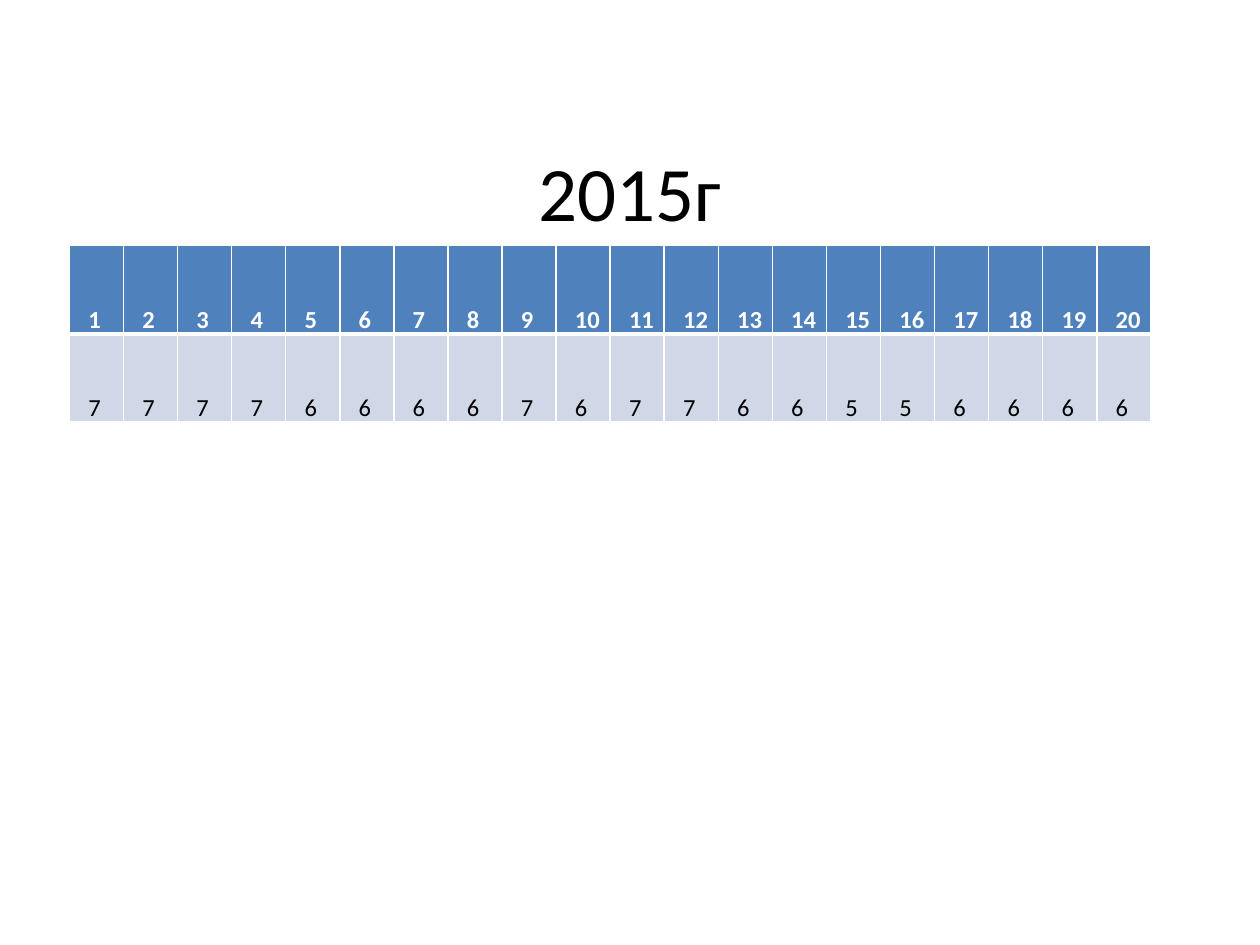
from lxml import etree
from pptx import Presentation
from pptx import util as u
from pptx.dml.color import RGBColor
from pptx.enum import text
from pptx.oxml.ns import qn

FONT = "Calibri"
COLORS = {
    "header": "4F81BD",
    "body": "D0D8E8",
    "border": "FFFFFF",
    "header_text": "FFFFFF",
    "text": "000000",
}
VALUES = [7, 7, 7, 7, 6, 6, 6, 6, 7, 6, 7, 7, 6, 6, 5, 5, 6, 6, 6, 6]
COL_WIDTH = 1.09
ROW_HEIGHT = 1.78


def rgb(name):
    return RGBColor.from_string(COLORS[name])


def set_font(p, size, color, bold=False):
    p.font.name = FONT
    p.font.size = u.Pt(size)
    p.font.bold = bold
    p.font.color.rgb = rgb(color)


def add_title(s, title):
    sp = s.shapes.add_textbox(u.Cm(1.27), u.Cm(0.76), u.Cm(22.86), u.Cm(6.17))
    tf = sp.text_frame
    tf.word_wrap = True
    tf.vertical_anchor = text.MSO_ANCHOR.MIDDLE
    p = tf.paragraphs[0]
    p.text = title
    p.alignment = text.PP_ALIGN.CENTER
    set_font(p, 44, "text")


def set_borders(cell, top, bottom):
    tc_pr = cell._tc.get_or_add_tcPr()
    widths = {"a:lnL": 1, "a:lnR": 1, "a:lnT": top, "a:lnB": bottom}
    for i, (tag, width) in enumerate(widths.items()):
        ln = etree.Element(qn(tag), w=str(u.Pt(width)))
        fill = etree.SubElement(ln, qn("a:solidFill"))
        etree.SubElement(fill, qn("a:srgbClr"), val=COLORS["border"])
        tc_pr.insert(i, ln)


def fill_cell(cell, value, header):
    cell.fill.solid()
    cell.fill.fore_color.rgb = rgb("header" if header else "body")
    cell.margin_left = cell.margin_right = u.Cm(0.18)
    cell.margin_top = cell.margin_bottom = 0
    p = cell.text_frame.paragraphs[0]
    p.text = str(value)
    p.line_spacing = 3.0
    p._p.get_or_add_pPr().set("marL", str(u.Cm(0.2)))
    set_font(p, 14, "header_text" if header else "text", header)
    set_borders(cell, top=1 if header else 3, bottom=3 if header else 1)


def add_value_table(s, values):
    rows = [range(1, len(values) + 1), values]
    table = s.shapes.add_table(
        len(rows), len(values), u.Cm(1.4), u.Cm(4.95),
        u.Cm(COL_WIDTH * len(values)), u.Cm(ROW_HEIGHT * len(rows)),
    ).table
    for col in table.columns:
        col.width = u.Cm(COL_WIDTH)
    for r, row in enumerate(rows):
        table.rows[r].height = u.Cm(ROW_HEIGHT)
        for c, value in enumerate(row):
            fill_cell(table.cell(r, c), value, header=r == 0)


def main():
    prs = Presentation()
    prs.slide_width, prs.slide_height = u.Cm(25.4), u.Cm(19.05)
    s = prs.slides.add_slide(prs.slide_layouts[6])
    add_title(s, "2015г")
    add_value_table(s, VALUES)
    prs.save("out.pptx")


if __name__ == "__main__":
    main()
